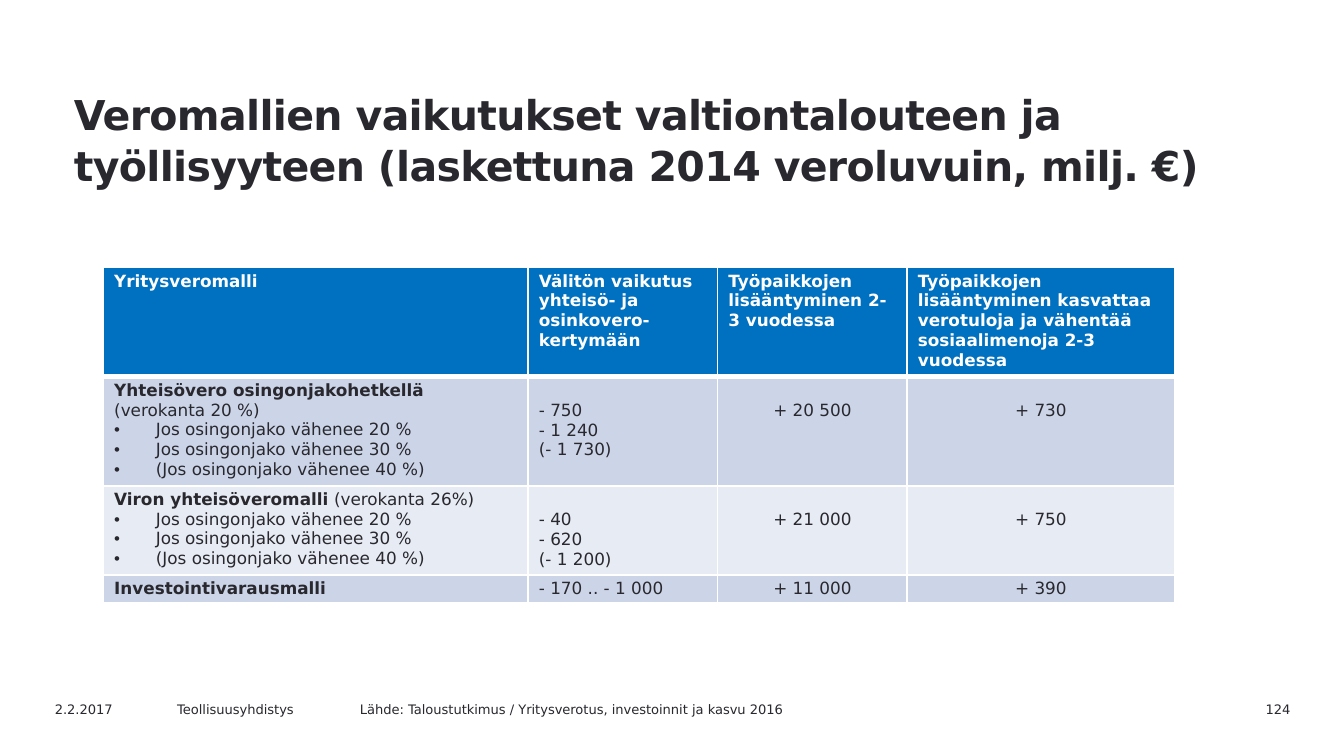
from lxml import etree
from pptx import Presentation
from pptx.dml.color import RGBColor
from pptx.enum.text import MSO_ANCHOR, MSO_AUTO_SIZE, PP_ALIGN
from pptx.oxml.ns import qn
from pptx.util import Inches, Pt

LEFT, CENTER, RIGHT = PP_ALIGN.LEFT, PP_ALIGN.CENTER, PP_ALIGN.RIGHT
TOP = MSO_ANCHOR.TOP
NO_FIT = MSO_AUTO_SIZE.NONE

FONT = "DejaVu Sans"
BULLET_FONT = "Arial"
INK = RGBColor(0x29, 0x28, 0x2E)
WHITE = RGBColor(0xFF, 0xFF, 0xFF)
HEADER_BLUE = RGBColor(0x00, 0x70, 0xC0)
BAND_DARK = RGBColor(0xCC, 0xD5, 0xE8)
BAND_LIGHT = RGBColor(0xE7, 0xEB, 0xF4)

TITLE = ("Veromallien vaikutukset valtiontalouteen ja työllisyyteen "
         "(laskettuna 2014 veroluvuin, milj. €)")
HEADERS = [
    "Yritysveromalli",
    "Välitön vaikutus yhteisö- ja osinkovero- kertymään",
    "Työpaikkojen lisääntyminen 2-3 vuodessa",
    "Työpaikkojen lisääntyminen kasvattaa verotuloja ja vähentää "
    "sosiaalimenoja 2-3 vuodessa",
]
DIVIDEND_CASES = [
    "Jos osingonjako vähenee 20 %",
    "Jos osingonjako vähenee 30 %",
    "(Jos osingonjako vähenee 40 %)",
]
MODELS = [
    ("Yhteisövero osingonjakohetkellä ", "(verokanta 20 %)", DIVIDEND_CASES,
     ["- 750", "- 1 240", "(- 1 730)"], "+ 20 500", "+ 730"),
    ("Viron yhteisöveromalli ", "(verokanta 26%)", DIVIDEND_CASES,
     ["- 40", "- 620", "(- 1 200)"], "+ 21 000", "+ 750"),
    ("Investointivarausmalli", "", [],
     ["- 170 .. - 1 000"], "+ 11 000", "+ 390"),
]
FOOTERS = [
    ("124", 8.76, 0.94, RIGHT),
    ("2.2.2017", 0.31, 1, LEFT),
    ("Teollisuusyhdistys", 1.22, 1.42, LEFT),
    ("Lähde: Taloustutkimus / Yritysverotus, investoinnit ja kasvu 2016",
     2.58, 3.52, LEFT),
]
COLUMN_WIDTHS = [3.16, 1.41, 1.41, 1.99]
ROW_HEIGHTS = [0.79, 0.79, 0.65, 0.21]
CELL_MARGIN = 0.03
LINE_HEIGHT = 0.15


def add_text(paragraph, text, size=9, color=INK, bold=False, align=LEFT):
    paragraph.alignment = align
    span = paragraph.add_run()
    span.text = text
    span.font.name = FONT
    span.font.size = Pt(size)
    span.font.bold = bold
    span.font.color.rgb = color
    return span


def add_bullet(paragraph):
    properties = paragraph._p.get_or_add_pPr()
    properties.set("marL", str(Inches(0.31)))
    properties.set("indent", str(-Inches(0.31)))
    etree.SubElement(properties, qn("a:buFont"), typeface=BULLET_FONT)
    etree.SubElement(properties, qn("a:buChar"), char="•")


def add_lines(frame, lines, **text_format):
    for index, line in enumerate(lines):
        para = frame.add_paragraph() if index else frame.paragraphs[0]
        add_text(para, line, **text_format)


def add_borders(cell, bottom_width):
    properties = cell._tc.get_or_add_tcPr()
    for side, width in (("L", 1), ("R", 1), ("T", 1), ("B", bottom_width)):
        line = etree.SubElement(properties, qn(f"a:ln{side}"), w=str(Pt(width)))
        fill = etree.SubElement(line, qn("a:solidFill"))
        etree.SubElement(fill, qn("a:srgbClr"), val=str(WHITE))


def format_cell(cell, color, bottom_width=1, lines_above=0):
    add_borders(cell, bottom_width)
    cell.fill.solid()
    cell.fill.fore_color.rgb = color
    cell.vertical_anchor = TOP
    cell.margin_left = cell.margin_right = Inches(0.08)
    cell.margin_bottom = Inches(CELL_MARGIN)
    cell.margin_top = Inches(CELL_MARGIN + lines_above * LINE_HEIGHT)


def add_title(page):
    title = page.shapes.title
    title.left, title.top = Inches(0.45), Inches(0.66)
    title.width, title.height = Inches(8.88), Inches(0.74)
    frame = title.text_frame
    frame.auto_size = NO_FIT
    frame.word_wrap = True
    frame.vertical_anchor = TOP
    frame.margin_top = frame.margin_bottom = 0
    para = frame.paragraphs[0]
    para.line_spacing = Pt(27)
    span = add_text(para, TITLE, size=22, bold=True)
    span.font._element.set("spc", "-34")


def add_footer(page, text, left, width, align):
    box = page.shapes.add_textbox(
        Inches(left), Inches(5.17), Inches(width), Inches(0.18))
    box.text_frame.word_wrap = True
    add_text(box.text_frame.paragraphs[0], text, size=7, align=align)


def fill_model_row(cells, model, color):
    name, rate, cases, effects, jobs, revenue = model
    lines_above = 1 if cases else 0
    for index, cell in enumerate(cells):
        format_cell(cell, color, lines_above=lines_above if index else 0)
    frame = cells[0].text_frame
    add_text(frame.paragraphs[0], name, bold=True)
    if rate:
        add_text(frame.paragraphs[0], rate)
    for case in cases:
        para = frame.add_paragraph()
        add_bullet(para)
        add_text(para, case)
    add_lines(cells[1].text_frame, effects)
    add_lines(cells[2].text_frame, [jobs], align=CENTER)
    add_lines(cells[3].text_frame, [revenue], align=CENTER)


def add_model_table(page):
    table = page.shapes.add_table(
        len(ROW_HEIGHTS), len(COLUMN_WIDTHS), Inches(0.77), Inches(1.99),
        Inches(sum(COLUMN_WIDTHS)), Inches(sum(ROW_HEIGHTS))).table
    for column, width in zip(table.columns, COLUMN_WIDTHS):
        column.width = Inches(width)
    for row, height in zip(table.rows, ROW_HEIGHTS):
        row.height = Inches(height)
    for cell, header in zip(table.rows[0].cells, HEADERS):
        format_cell(cell, HEADER_BLUE, bottom_width=3)
        add_lines(cell.text_frame, [header], color=WHITE, bold=True)
    for index, model in enumerate(MODELS):
        color = BAND_LIGHT if index % 2 else BAND_DARK
        fill_model_row(list(table.rows[index + 1].cells), model, color)


def main():
    deck = Presentation()
    deck.slide_width = Inches(10)
    deck.slide_height = deck.slide_width * 9 // 16
    page = deck.slides.add_slide(deck.slide_layouts[5])
    add_title(page)
    for footer in FOOTERS:
        add_footer(page, *footer)
    add_model_table(page)
    deck.save("out.pptx")


if __name__ == "__main__":
    main()
